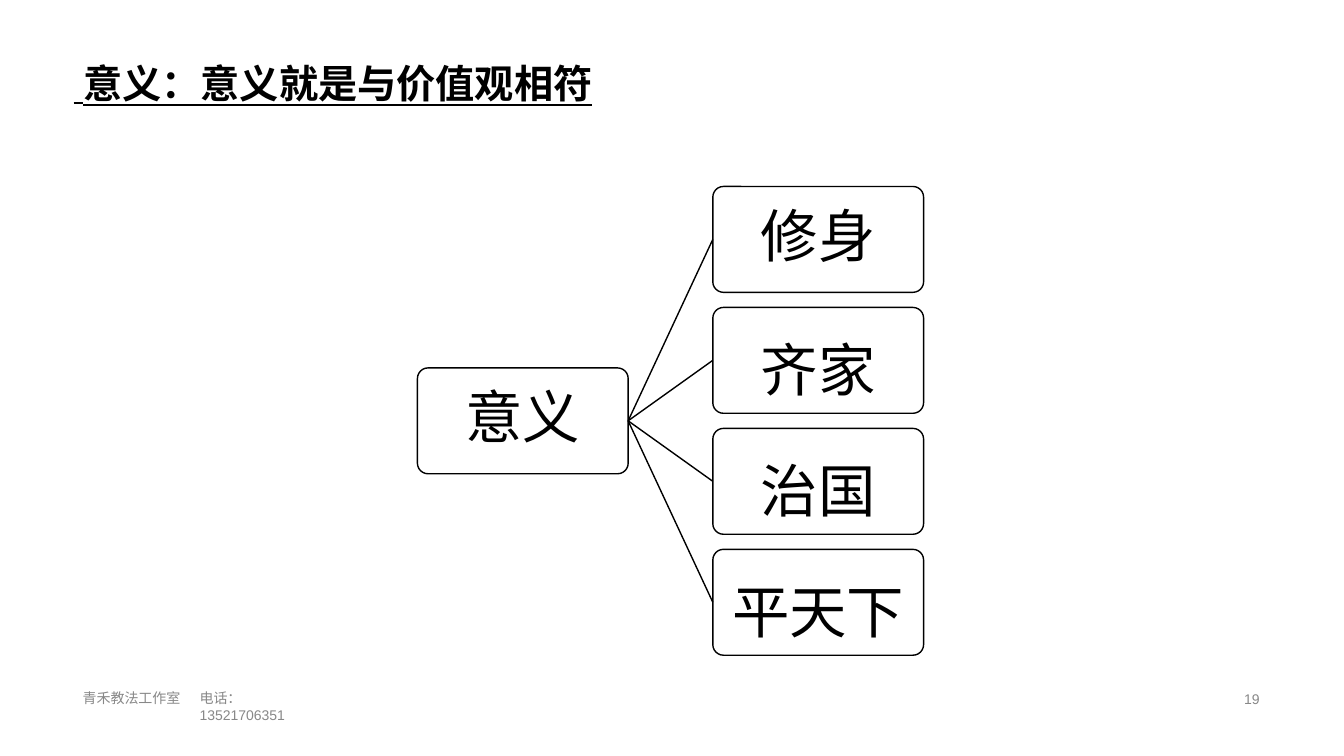
from dataclasses import dataclass

from lxml.etree import SubElement
from pptx import Presentation
from pptx.dml.color import RGBColor
from pptx.enum.shapes import MSO_CONNECTOR as CONN, MSO_SHAPE as SHAPE
from pptx.enum.text import MSO_ANCHOR as ANCHOR, MSO_AUTO_SIZE as AUTO, PP_ALIGN as ALIGN
from pptx.oxml.ns import qn
from pptx.util import Inches, Pt


@dataclass(frozen=True)
class Theme:
    ink: RGBColor = RGBColor(0x00, 0x00, 0x00)
    muted: RGBColor = RGBColor(0x88, 0x88, 0x88)
    cjk: str = "Noto Sans CJK SC"
    latin: str = "Arial"
    serif: str = "Times New Roman"
    title: int = 28
    node: int = 41
    footer: int = 10
    line: float = 1


T = Theme()

TITLE = "意义：意义就是与价值观相符"
ROOT = ("意义", -0.05)
# Branch label and how far it sits below the middle of its box
BRANCHES = [("修身", -0.05), ("齐家", 0.08), ("治国", 0.08), ("平天下", 0.08)]
# Left, top, width, height, runs of (text, font)
FOOTER = [
    (0.82, 6.84, 1.1, 0.21, [("青禾教法工作室", T.cjk)]),
    (1.98, 6.84, 1.0, 0.39, [("电话：", T.cjk), ("13521706351", T.latin)]),
    (12.34, 6.85, 0.25, 0.18, [("19", T.latin)]),
]

BOX_W, BOX_H = 2.09, 1.05
ROOT_X, BRANCH_X = 4.14, 7.07
BRANCH_Y, PITCH = 1.85, 1.2


def add_run(p, text, font, size, color, bold=False, underline=False):
    r = p.add_run()
    r.text = text
    f = r.font
    f.name, f.size, f.bold, f.underline = font, Pt(size), bold, underline
    f.color.rgb = color
    SubElement(r._r.get_or_add_rPr(), qn("a:ea")).set("typeface", font)


def clear_insets(tf):
    tf.margin_left = tf.margin_right = tf.margin_top = tf.margin_bottom = 0


def add_title(s):
    sp = s.shapes.title
    sp.left, sp.top = Inches(0.73), Inches(0.58)
    sp.width, sp.height = Inches(11.88), Inches(0.49)
    tf = sp.text_frame
    clear_insets(tf)
    tf.auto_size, tf.vertical_anchor = AUTO.NONE, ANCHOR.MIDDLE
    p = tf.paragraphs[0]
    p.alignment = ALIGN.LEFT
    add_run(p, " ", T.serif, T.title, T.ink, underline=True)
    add_run(p, TITLE, T.cjk, T.title, T.ink, bold=True, underline=True)


def add_node(s, x, y, label, drop):
    """Add a rounded box; drop moves its label down from the middle, in inches."""
    sp = s.shapes.add_shape(SHAPE.ROUNDED_RECTANGLE, Inches(x), Inches(y),
                            Inches(BOX_W), Inches(BOX_H))
    sp.adjustments[0] = 0.1
    sp.shadow.inherit = False
    sp.fill.background()
    sp.line.color.rgb, sp.line.width = T.ink, Pt(T.line)
    tf = sp.text_frame
    clear_insets(tf)
    tf.margin_top = Inches(max(0, 2 * drop))
    tf.margin_bottom = Inches(max(0, -2 * drop))
    tf.vertical_anchor = ANCHOR.MIDDLE
    p = tf.paragraphs[0]
    p.alignment = ALIGN.CENTER
    add_run(p, label, T.cjk, T.node, T.ink)
    return sp


def link(s, parent, child):
    c = s.shapes.add_connector(CONN.STRAIGHT, 0, 0, 0, 0)
    c.begin_connect(parent, 3)
    c.end_connect(child, 1)
    c.line.color.rgb, c.line.width = T.ink, Pt(T.line)
    SubElement(c._element.spPr, qn("a:effectLst"))


def add_tree(s):
    root_y = BRANCH_Y + PITCH * (len(BRANCHES) - 1) / 2
    root = add_node(s, ROOT_X, root_y, *ROOT)
    for i, branch in enumerate(BRANCHES):
        link(s, root, add_node(s, BRANCH_X, BRANCH_Y + i * PITCH, *branch))


def add_footer(s):
    for x, y, w, h, runs in FOOTER:
        tf = s.shapes.add_textbox(Inches(x), Inches(y), Inches(w), Inches(h)).text_frame
        clear_insets(tf)
        tf.word_wrap = True
        for text, font in runs:
            add_run(tf.paragraphs[0], text, font, T.footer, T.muted)


def main():
    prs = Presentation()
    prs.slide_width, prs.slide_height = Inches(13.33), Inches(7.5)
    s = prs.slides.add_slide(prs.slide_layouts[5])
    add_title(s)
    add_tree(s)
    add_footer(s)
    prs.save("out.pptx")


if __name__ == "__main__":
    main()
